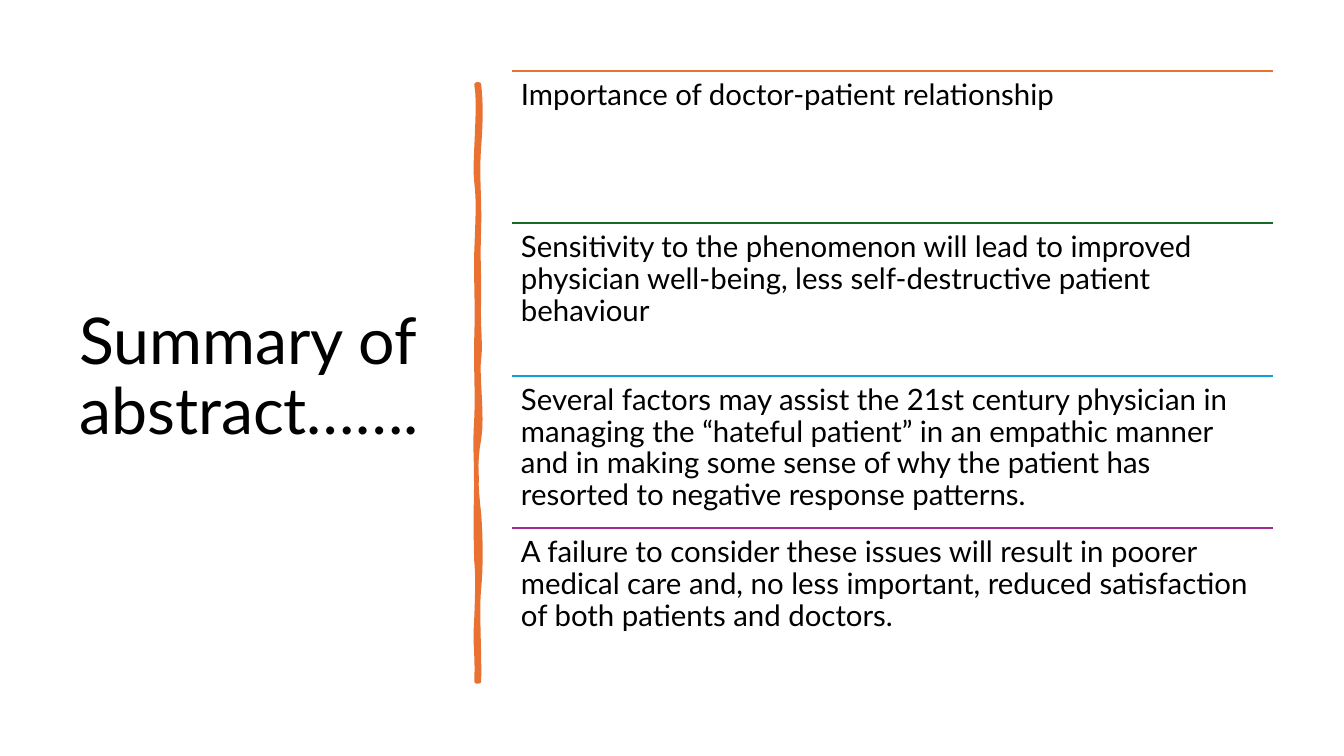
from lxml import etree
from pptx import Presentation
from pptx.dml.color import RGBColor
from pptx.enum.shapes import MSO_CONNECTOR as Connector
from pptx.enum.text import MSO_ANCHOR as Anchor
from pptx.oxml.ns import qn
from pptx.util import Cm, Pt

BLACK = RGBColor(0x00, 0x00, 0x00)
ORANGE = RGBColor(0xE9, 0x71, 0x32)
GREEN = RGBColor(0x19, 0x6B, 0x24)
BLUE = RGBColor(0x0F, 0x9E, 0xD5)
PURPLE = RGBColor(0xA0, 0x2B, 0x93)

POINTS = [
    (ORANGE, "Importance of doctor-patient relationship"),
    (GREEN, "Sensitivity to the phenomenon will lead to improved physician "
            "well-being, less self-destructive patient behaviour"),
    (BLUE, "Several factors may assist the 21st century physician in managing "
           "the “hateful patient” in an empathic manner and in making some "
           "sense of why the patient has resorted to negative response patterns."),
    (PURPLE, "A failure to consider these issues will result in poorer medical "
             "care and, no less important, reduced satisfaction of both "
             "patients and doctors."),
]

# Brush edges in cm: two control points (x, y) and the y where each curve ends
EDGE_X = 0.03
BRUSH_HEIGHT = 15.04
RIGHT_EDGE = [
    (0.08, 0.46, 0.08, 0.89, 1.57), (-0.03, 2.26, 0.05, 2.82, 3.61),
    (0, 4.39, 0.03, 4.52, 5.33), (0, 6.12, 0.08, 6.55, 6.91),
    (-0.03, 7.26, 0.13, 8.38, 8.94), (-0.08, 9.47, -0.05, 10.16, 10.82),
    (0.08, 11.48, 0.08, 12.19, 12.7), (-0.03, 13.18, 0.05, 14.38, BRUSH_HEIGHT),
]
LEFT_EDGE = [
    (0, 14.27, -0.08, 14.22, 13.44), (0, 12.67, 0, 12.34, 12.01),
    (-0.05, 11.68, -0.05, 10.44, 9.98), (-0.03, 9.53, -0.08, 9.17, 8.41),
    (0, 7.67, -0.05, 7.34, 6.38), (0, 5.44, -0.05, 5, 4.22),
    (0, 3.4, 0.03, 2.95, 2.46), (-0.1, 2.01, 0.08, 0.51, 0),
]


def add_text(page, text, left, top, width, height, size,
             anchor=Anchor.TOP, inset=0.23):
    box = page.shapes.add_textbox(Cm(left), Cm(top), Cm(width), Cm(height))
    frame = box.text_frame
    frame.word_wrap = True
    frame.vertical_anchor = anchor
    frame.margin_left = frame.margin_right = Cm(inset)
    frame.margin_top = frame.margin_bottom = Cm(inset)
    para = frame.paragraphs[0]
    para.line_spacing = 0.9
    span = para.add_run()
    span.text = text
    span.font.name = "Lato"
    span.font.size = Pt(size)
    span.font.color.rgb = BLACK


def trace_edge(x, start, curves, steps=8):
    """Points along a chain of cubic curves whose ends all lie at x."""
    trace = [(x, start)]
    for x1, y1, x2, y2, end in curves:
        for step in range(1, steps + 1):
            t = step / steps
            u = 1 - t
            a, b, c, d = u**3, 3 * u * u * t, 3 * u * t * t, t**3
            trace.append((a * x + b * x1 + c * x2 + d * x,
                          a * start + b * y1 + c * y2 + d * end))
        start = end
    return trace


def add_brush_divider(page, center, top):
    outline = (trace_edge(EDGE_X, 0, RIGHT_EDGE)
               + trace_edge(-EDGE_X, BRUSH_HEIGHT, LEFT_EDGE))
    corners = [(Cm(center + x), Cm(top + y)) for x, y in outline]
    builder = page.shapes.build_freeform(*corners[0])
    builder.add_line_segments(corners[1:], close=True)
    brush = builder.convert_to_shape()
    brush.shadow.inherit = False
    brush.fill.solid()
    brush.fill.fore_color.rgb = ORANGE
    brush.line.color.rgb = ORANGE
    brush.line.width = Pt(3.25)
    etree.SubElement(brush.line._get_or_add_ln(), qn("a:round"))


def add_rule(page, left, top, width, color):
    rule = page.shapes.add_connector(
        Connector.STRAIGHT, Cm(left), Cm(top), Cm(left + width), Cm(top))
    rule.line.color.rgb = color
    rule.line.width = Pt(1.5)
    etree.SubElement(rule._element.spPr, qn("a:effectLst"))


def add_point_list(page, left, top, width, height):
    row_height = height / len(POINTS)
    for index, (color, text) in enumerate(POINTS):
        row_top = top + index * row_height
        add_rule(page, left, row_top, width, color)
        add_text(page, text, left, row_top, width, row_height, size=21)


def main():
    deck = Presentation()
    deck.slide_width, deck.slide_height = Cm(33.87), Cm(19.05)
    page = deck.slides.add_slide(deck.slide_layouts[6])

    # Title on the left
    add_text(page, "Summary of abstract…….", 1.75, 1.78, 9.5, 15.52,
             size=46, anchor=Anchor.MIDDLE, inset=0.25)
    # Hand-drawn divider
    add_brush_divider(page, center=12.04, top=2.13)
    # Ruled points on the right
    add_point_list(page, 12.9, 1.78, 19.18, 15.38)

    deck.save("out.pptx")


if __name__ == "__main__":
    main()
